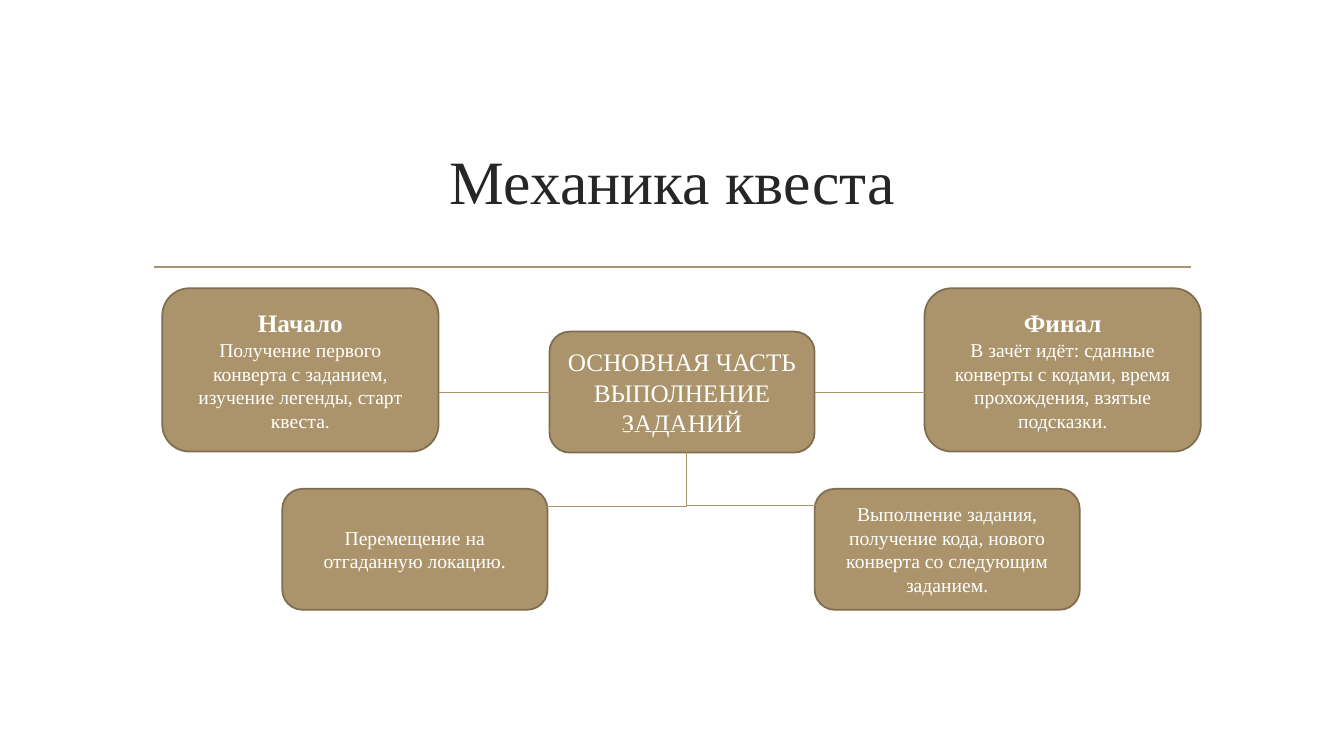
import pptx
import pptx.util
import pptx.dml.color
import pptx.enum.shapes
import pptx.enum.text
from lxml import etree

Inches, Pt = pptx.util.Inches, pptx.util.Pt
SHAPE = pptx.enum.shapes.MSO_SHAPE
CONNECTOR = pptx.enum.shapes.MSO_CONNECTOR
DRAWING_NS = "{http://schemas.openxmlformats.org/drawingml/2006/main}"

COLORS = {"sand": "AB946B", "border": "7F6D4F", "title": "262626", "white": "FFFFFF"}


def rgb(name):
    return pptx.dml.color.RGBColor.from_string(COLORS[name])


class QuestSlide:
    font = "Times New Roman"

    def __init__(self, slide):
        self.slide = slide

    def set_lines(self, frame, lines, color):
        """Fill a frame with centred lines of (text, size, bold)."""
        frame.word_wrap = True
        frame.vertical_anchor = pptx.enum.text.MSO_ANCHOR.MIDDLE
        frame.text = "\n".join(text for text, _, _ in lines)
        for paragraph, (_, size, bold) in zip(frame.paragraphs, lines):
            paragraph.alignment = pptx.enum.text.PP_ALIGN.CENTER
            for run in paragraph.runs:
                run.font.name = self.font
                run.font.size = Pt(size)
                run.font.bold = bold
                run.font.color.rgb = rgb(color)

    def title(self, text, left, top, width, height):
        box = self.slide.shapes.add_textbox(*map(Inches, (left, top, width, height)))
        self.set_lines(box.text_frame, [(text, 44, False)], "title")

    def stage(self, left, top, width, height, lines):
        box = self.slide.shapes.add_shape(
            SHAPE.ROUNDED_RECTANGLE, *map(Inches, (left, top, width, height)))
        box.shadow.inherit = False
        box.fill.solid()
        box.fill.fore_color.rgb = rgb("sand")
        box.line.color.rgb = rgb("border")
        box.line.width = Pt(1.25)
        self.set_lines(box.text_frame, lines, "white")
        return box

    def link(self, start, end, width=0.75, turn_x=None):
        """Draw a straight line, or an elbow that turns at turn_x."""
        kind = CONNECTOR.STRAIGHT if turn_x is None else CONNECTOR.ELBOW
        line = self.slide.shapes.add_connector(kind, *map(Inches, start + end))
        line.line.color.rgb = rgb("sand")
        line.line.width = Pt(width)
        properties = line._element.spPr
        etree.SubElement(properties, DRAWING_NS + "effectLst")
        if turn_x is not None:
            share = round((turn_x - start[0]) / (end[0] - start[0]) * 100000)
            guides = properties.find(f"{DRAWING_NS}prstGeom/{DRAWING_NS}avLst")
            etree.SubElement(guides, DRAWING_NS + "gd", name="adj1", fmla=f"val {share}")
        return line


def main():
    deck = pptx.Presentation()
    deck.slide_width, deck.slide_height = Inches(13.33), Inches(7.5)
    quest = QuestSlide(deck.slides.add_slide(deck.slide_layouts[6]))

    # Heading and its rule
    quest.link((1.53, 2.65), (11.81, 2.65), width=1.25)
    quest.title("Механика квеста", 1.42, 1.07, 10.5, 1.43)

    # Start and finish
    outer_stages = [
        (1.61, "Начало",
         "Получение первого конверта с заданием, изучение легенды, старт квеста."),
        (9.17, "Финал",
         "В зачёт идёт: сданные конверты с кодами, время прохождения, взятые подсказки."),
    ]
    for left, heading, details in outer_stages:
        quest.stage(left, 2.86, 2.74, 1.62, [(heading, 18, True), (details, 14, False)])

    # Steps of the main part
    steps = [
        (8.08, "Выполнение задания, получение кода, нового конверта со следующим заданием."),
        (2.8, "Перемещение на отгаданную локацию."),
    ]
    for left, details in steps:
        quest.stage(left, 4.85, 2.63, 1.2, [(details, 14, False)])

    main_part = quest.stage(5.45, 3.29, 2.63, 1.2, [
        ("ОСНОВНАЯ ЧАСТЬ", 18, False), ("ВЫПОЛНЕНИЕ ЗАДАНИЙ", 18, False)])

    # Links from the main part to start and finish
    for main_x, outer_x, side in [(8.08, 9.17, 3), (5.45, 4.35, 1)]:
        quest.link((main_x, 3.89), (outer_x, 3.89)).begin_connect(main_part, side)

    # Branches to the steps
    for start, end in [((5.45, 4.27), (4.53, 5.02)), ((6.36, 4.46), (8.1, 5.02))]:
        quest.link(start, end, turn_x=6.81)

    deck.save("out.pptx")


if __name__ == "__main__":
    main()
